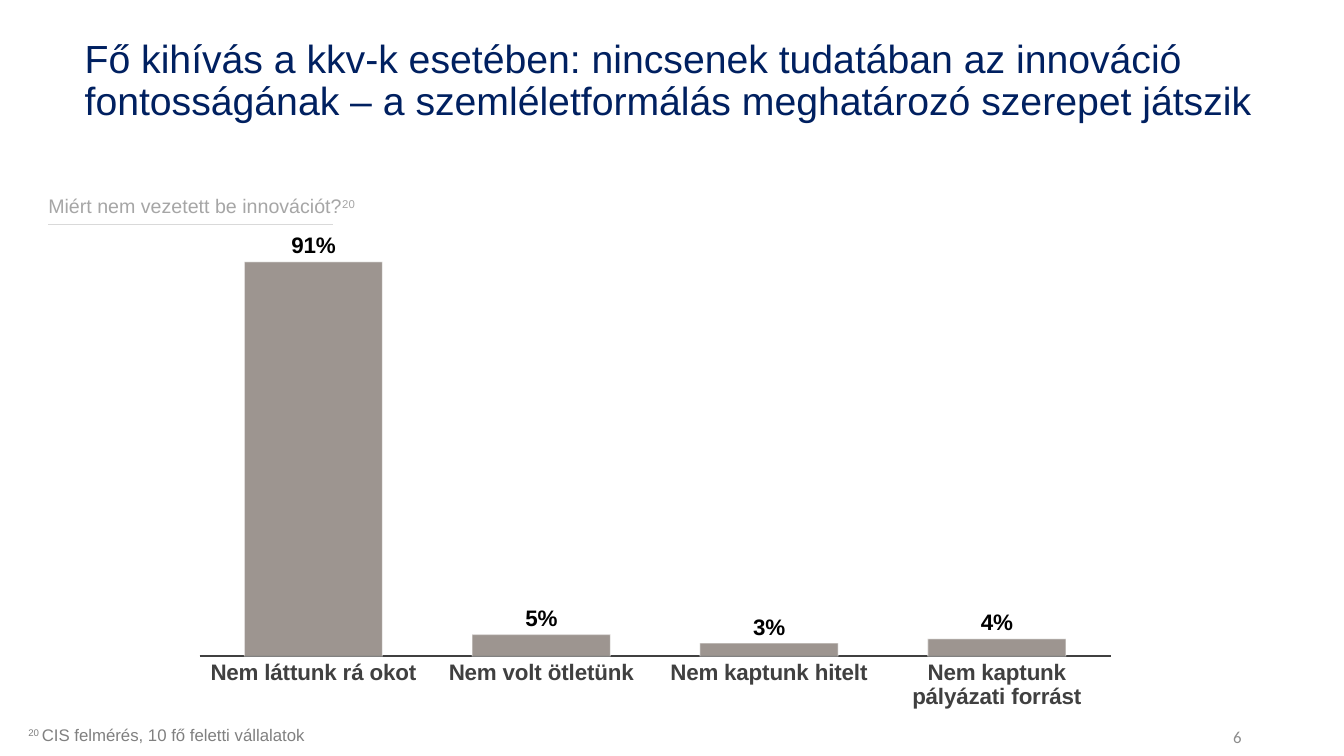
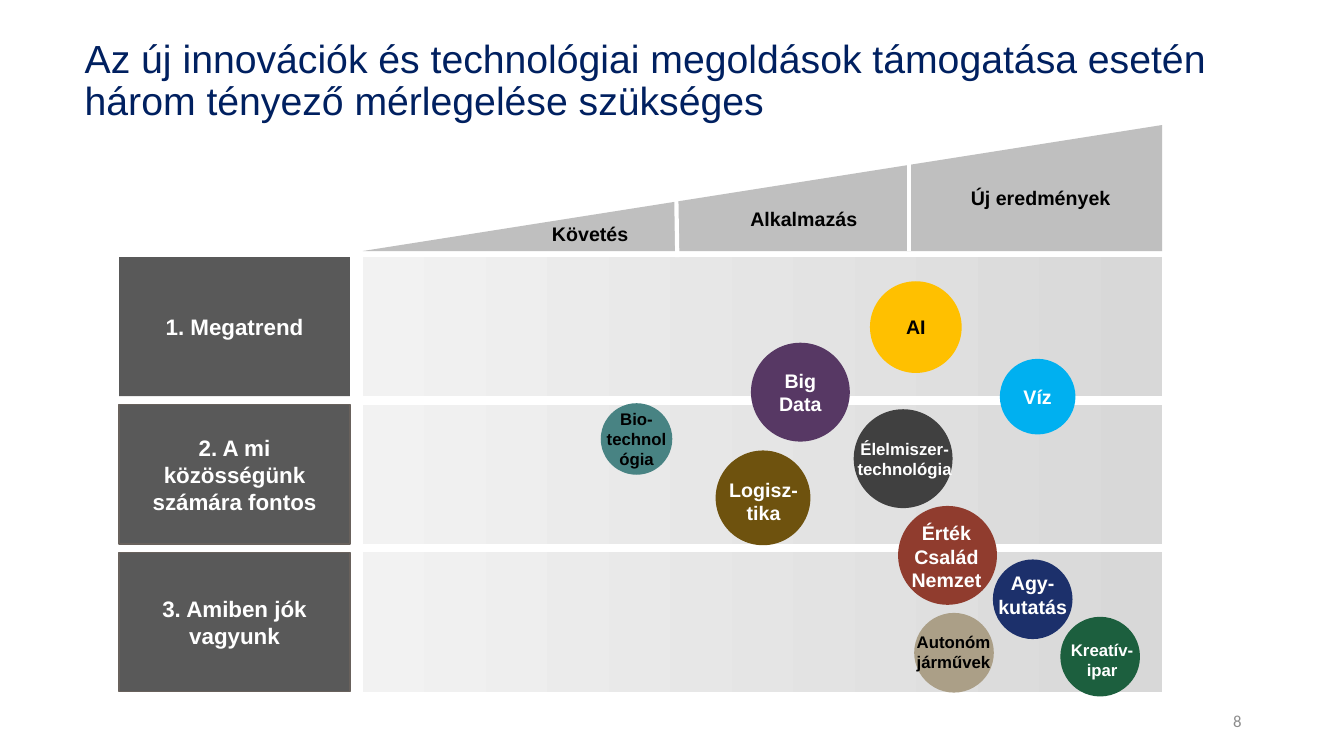
from dataclasses import dataclass
from typing import NamedTuple

from lxml.etree import SubElement
from pptx import Presentation
from pptx.chart.data import CategoryChartData as ChartData
from pptx.dml.color import RGBColor as Rgb
from pptx.enum.chart import XL_CHART_TYPE as Kind, XL_LABEL_POSITION as Spot
from pptx.enum.chart import XL_TICK_MARK as Tick
from pptx.enum.shapes import MSO_CONNECTOR as Link, MSO_SHAPE as Form
from pptx.enum.text import MSO_ANCHOR as Anchor, PP_ALIGN as Align
from pptx.oxml import parse_xml
from pptx.oxml.ns import nsdecls, qn
from pptx.util import Pt

NAVY = Rgb(0x00, 0x20, 0x60)
BLACK = Rgb(0x00, 0x00, 0x00)
WHITE = Rgb(0xFF, 0xFF, 0xFF)
COAL = Rgb(0x40, 0x40, 0x40)
SLATE = Rgb(0x59, 0x59, 0x59)
EDGE = Rgb(0x68, 0x61, 0x5C)
STONE = Rgb(0x8C, 0x83, 0x7D)
GREY = Rgb(0x80, 0x80, 0x80)
FOLIO = Rgb(0x8C, 0x8C, 0x8C)
ASH = Rgb(0xA6, 0xA6, 0xA6)
WEDGE = Rgb(0xBF, 0xBF, 0xBF)
RULE = Rgb(0xD9, 0xD9, 0xD9)
DEEP = Rgb(0xD8, 0xD8, 0xD8)
PALE = Rgb(0xF2, 0xF2, 0xF2)
GOLD = Rgb(0xFF, 0xC0, 0x00)
PLUM = Rgb(0x57, 0x38, 0x64)
SKY = Rgb(0x00, 0xB0, 0xF0)
TEAL = Rgb(0x48, 0x83, 0x83)
BROWN = Rgb(0x6E, 0x52, 0x0E)
RUST = Rgb(0x90, 0x3C, 0x2E)
BLUE = Rgb(0x1C, 0x30, 0x6B)
SAND = Rgb(0xAB, 0x9F, 0x87)
GREEN = Rgb(0x1C, 0x5F, 0x3E)


class Area(NamedTuple):
    left: float
    top: float
    width: float
    height: float

    def pts(self) -> list:
        return [Pt(n) for n in self]


@dataclass(frozen=True)
class Style:
    size: float
    ink: Rgb
    bold: bool = False
    align: Align = Align.LEFT
    face: str = "Arial"


@dataclass(frozen=True)
class Disc:
    left: float
    top: float
    size: float
    fill: Rgb
    text: str = ""
    ink: Rgb = WHITE


@dataclass(frozen=True)
class Tag:
    area: Area
    text: str
    size: float = 14
    ink: Rgb = WHITE
    wrap: bool = False
    anchor: Anchor = Anchor.TOP


TITLE = Style(28, NAVY)
PAGE = Style(12, FOLIO, align=Align.RIGHT, face="Calibri")
HEAD = Style(14, ASH)
NOTE = Style(12, GREY)
SIDE = Style(16, WHITE, True, Align.CENTER)


def set_font(font, style: Style) -> None:
    font.size, font.bold, font.name = Pt(style.size), style.bold, style.face
    font.color.rgb = style.ink


def put(frame, text: str, style: Style) -> None:
    """Write one paragraph for each line of text."""
    for i, line in enumerate(text.split("\n")):
        para = frame.add_paragraph() if i else frame.paragraphs[0]
        para.add_run().text = line
        para.alignment = style.align
        set_font(para.font, style)


def add_box(slide, area: Area, text: str, style: Style,
            anchor: Anchor = Anchor.MIDDLE, wrap: bool = True):
    frame = slide.shapes.add_textbox(*area.pts()).text_frame
    frame.word_wrap, frame.vertical_anchor = wrap, anchor
    put(frame, text, style)
    return frame


def lift(run) -> None:
    """Make a run superscript."""
    run.font._element.set("baseline", "30000")


def add_form(slide, form: Form, area: Area, fill: Rgb | None = None):
    shape = slide.shapes.add_shape(form, *area.pts())
    shape.shadow.inherit = False
    shape.line.fill.background()
    if fill is not None:
        shape.fill.solid()
        shape.fill.fore_color.rgb = fill
    return shape


def label(shape, text: str, style: Style) -> None:
    shape.text_frame.word_wrap = True
    shape.text_frame.vertical_anchor = Anchor.MIDDLE
    put(shape.text_frame, text, style)


def add_line(slide, ends: tuple, ink: Rgb, width: float) -> None:
    line = slide.shapes.add_connector(Link.STRAIGHT, *[Pt(n) for n in ends])
    line.line.color.rgb, line.line.width = ink, Pt(width)
    SubElement(line.element.spPr, qn("a:effectLst"))


def start(deck, title: str, page: str, top: float):
    """Add a slide with the shared title and page number."""
    slide = deck.slides.add_slide(deck.slide_layouts[5])
    head = slide.shapes.title
    head.left, head.top, head.width, head.height = Area(53.3, 24.5, 862, 73).pts()
    head.text_frame.word_wrap = True
    head.text_frame.vertical_anchor = Anchor.TOP
    put(head.text_frame, title, TITLE)
    head.text_frame.paragraphs[0].line_spacing = 0.9
    add_box(slide, Area(678, top, 216, 28.8), page, PAGE)
    return slide


def add_bars(slide) -> None:
    data = ChartData(number_format="0%")
    data.categories = ["Nem láttunk rá okot", "Nem volt ötletünk",
                       "Nem kaptunk hitelt", "Nem kaptunk pályázati forrást"]
    data.add_series("Series 1", [0.91, 0.05, 0.03, 0.04])
    chart = slide.shapes.add_chart(
        Kind.COLUMN_CLUSTERED, *Area(129, 152, 678, 360).pts(), data).chart
    chart.has_legend = chart.has_title = False
    set_font(chart.font, Style(10.5, BLACK, True))

    # Axes
    cats, vals = chart.category_axis, chart.value_axis
    cats.major_tick_mark = cats.minor_tick_mark = Tick.NONE
    set_font(cats.tick_labels.font, Style(16, COAL, True))
    cats.format.line.color.rgb, cats.format.line.width = COAL, Pt(1.5)
    vals.minimum_scale, vals.maximum_scale = 0, 1
    vals.has_major_gridlines = vals.visible = False

    # Columns and their labels
    plot = chart.plots[0]
    plot.gap_width, plot.vary_by_categories = 65, False
    bars = plot.series[0]
    bars.format.fill.solid()
    bars.format.fill.fore_color.rgb = STONE
    bars.format.line.color.rgb, bars.format.line.width = WHITE, Pt(0.75)
    look = chart.element.find(f".//{qn('c:ser')}/{qn('c:spPr')}")
    for ink, alpha in zip(list(look.iter(qn("a:srgbClr"))), ("85000", "50000")):
        SubElement(ink, qn("a:alpha")).set("val", alpha)
    marks = bars.data_labels
    marks.show_value, marks.position = True, Spot.OUTSIDE_END
    marks.number_format, marks.number_format_is_linked = "0%", False
    set_font(marks.font, Style(16, BLACK, True))

    # Plot area inside the chart
    field = chart.element.find(f".//{qn('c:plotArea')}")
    for old in field.findall(qn("c:layout")):
        field.remove(old)
    sizes = {"x": 0.02, "y": 0.02, "w": 0.96, "h": 0.86}
    parts = "".join(f'<c:{k} val="{v}"/>' for k, v in sizes.items())
    field.insert(0, parse_xml(
        f'<c:layout {nsdecls("c")}><c:manualLayout><c:layoutTarget val="inner"/>'
        f'<c:xMode val="edge"/><c:yMode val="edge"/>{parts}'
        '</c:manualLayout></c:layout>'))


def add_cause(deck) -> None:
    slide = start(deck, "Fő kihívás a kkv-k esetében: nincsenek tudatában az "
                  "innováció fontosságának – a szemléletformálás meghatározó "
                  "szerepet játszik", "6", 512)
    # Chart heading
    head = add_box(slide, Area(27.4, 131, 263.5, 32.4),
                   "Miért nem vezetett be innovációt?", HEAD)
    mark = head.paragraphs[0].add_run()
    mark.text = "20"
    lift(mark)
    add_line(slide, (34.6, 160.6, 237.6, 160.6), RULE, 0.5)
    add_bars(slide)
    # Footnote
    note = add_box(slide, Area(20.2, 517.7, 566.6, 14.4), "20 ", NOTE, Anchor.BOTTOM)
    note.margin_left = note.margin_right = note.margin_top = note.margin_bottom = 0
    lift(note.paragraphs[0].runs[0])
    note.paragraphs[0].add_run().text = "CIS felmérés, 10 fő feletti vállalatok"


ROWS = ("1. Megatrend", "2. A mi közösségünk számára fontos",
        "3. Amiben jók vagyunk")
ROW_TOP, ROW_STEP, ROW_HIGH = 183.6, 105.5, 99.4
GRID_LEFT, GRID_WIDE = 259.2, 571

STAGES = ((363.6, 151.2, "Követés"), (516.2, 140.4, "Alkalmazás"),
          (685.4, 126, "Új eredmények"))

DISCS = (
    Disc(621.4, 200.9, 65.5, GOLD, "AI", BLACK),
    Disc(536.4, 244.8, 70.6, PLUM, "Big Data"),
    Disc(714.2, 256.3, 54, SKY, "Víz"),
    Disc(429.1, 288, 51.1, TEAL),
    Disc(609.8, 292.3, 70.6, COAL),
    Disc(511.2, 321.8, 67.7, BROWN),
    Disc(641.5, 361.4, 70.6, RUST),
    Disc(709.2, 399.6, 56.9, BLUE),
    Disc(653, 437.8, 56.9, SAND),
    Disc(757.4, 440.6, 56.9, GREEN),
)

TAGS = (
    Tag(Area(423.4, 290.2, 62.6, 46.8), "Bio-technológia", 12, BLACK, True,
        Anchor.MIDDLE),
    Tag(Area(513.4, 337.7, 64.1, 41), "Logisz-\ntika"),
    Tag(Area(604.8, 309.6, 82.8, 36), "Élelmiszer-\ntechnológia", 12),
    Tag(Area(643.7, 368.6, 64.8, 58.3), "Érték\nCsalád\nNemzet"),
    Tag(Area(705.6, 404.6, 64.1, 41), "Agy-\nkutatás"),
    Tag(Area(647.3, 447.8, 67.7, 36), "Autonóm\njárművek", 12, BLACK),
    Tag(Area(757.4, 453.6, 59.8, 36), "Kreatív-\nipar", 12),
)


def add_map(deck) -> None:
    slide = start(deck, "Az új innovációk és technológiai megoldások támogatása "
                  "esetén három tényező mérlegelése szükséges", "8", 500.4)
    # Row heads and shaded bands
    for i, text in enumerate(ROWS):
        top = ROW_TOP + i * ROW_STEP
        side = add_form(slide, Form.RECTANGLE, Area(85, top, 165, ROW_HIGH), SLATE)
        if i:
            side.line.color.rgb, side.line.width = EDGE, Pt(1)
        label(side, text, SIDE)
        band = add_form(slide, Form.RECTANGLE,
                        Area(GRID_LEFT, top, GRID_WIDE, ROW_HIGH))
        band.fill.gradient()
        band.fill.gradient_angle = 180
        for stop, ink in zip(band.fill.gradient_stops, (DEEP, PALE)):
            stop.color.rgb = ink
    # Rising wedge with its stages
    wedge = add_form(slide, Form.RIGHT_TRIANGLE,
                     Area(GRID_LEFT, 89.3, GRID_WIDE, 90), WEDGE)
    wedge.element.spPr.xfrm.set("flipH", "1")
    add_line(slide, (483.1, 141.8, 483.8, 183.6), WHITE, 3)
    add_line(slide, (649.4, 117.4, 649.4, 179.3), WHITE, 3)
    for left, top, text in STAGES:
        add_box(slide, Area(left, top, 116, 31), text,
                Style(14, BLACK, True, Align.CENTER))
    # Topics
    for disc in DISCS:
        shape = add_form(slide, Form.OVAL,
                         Area(disc.left, disc.top, disc.size, disc.size), disc.fill)
        if disc.text:
            label(shape, disc.text, Style(14, disc.ink, True, Align.CENTER))
    for tag in TAGS:
        add_box(slide, tag.area, tag.text,
                Style(tag.size, tag.ink, True, Align.CENTER), tag.anchor, tag.wrap)


def main() -> None:
    deck = Presentation()
    deck.slide_width, deck.slide_height = Pt(960), Pt(540)
    add_cause(deck)
    add_map(deck)
    deck.save("out.pptx")


if __name__ == "__main__":
    main()
